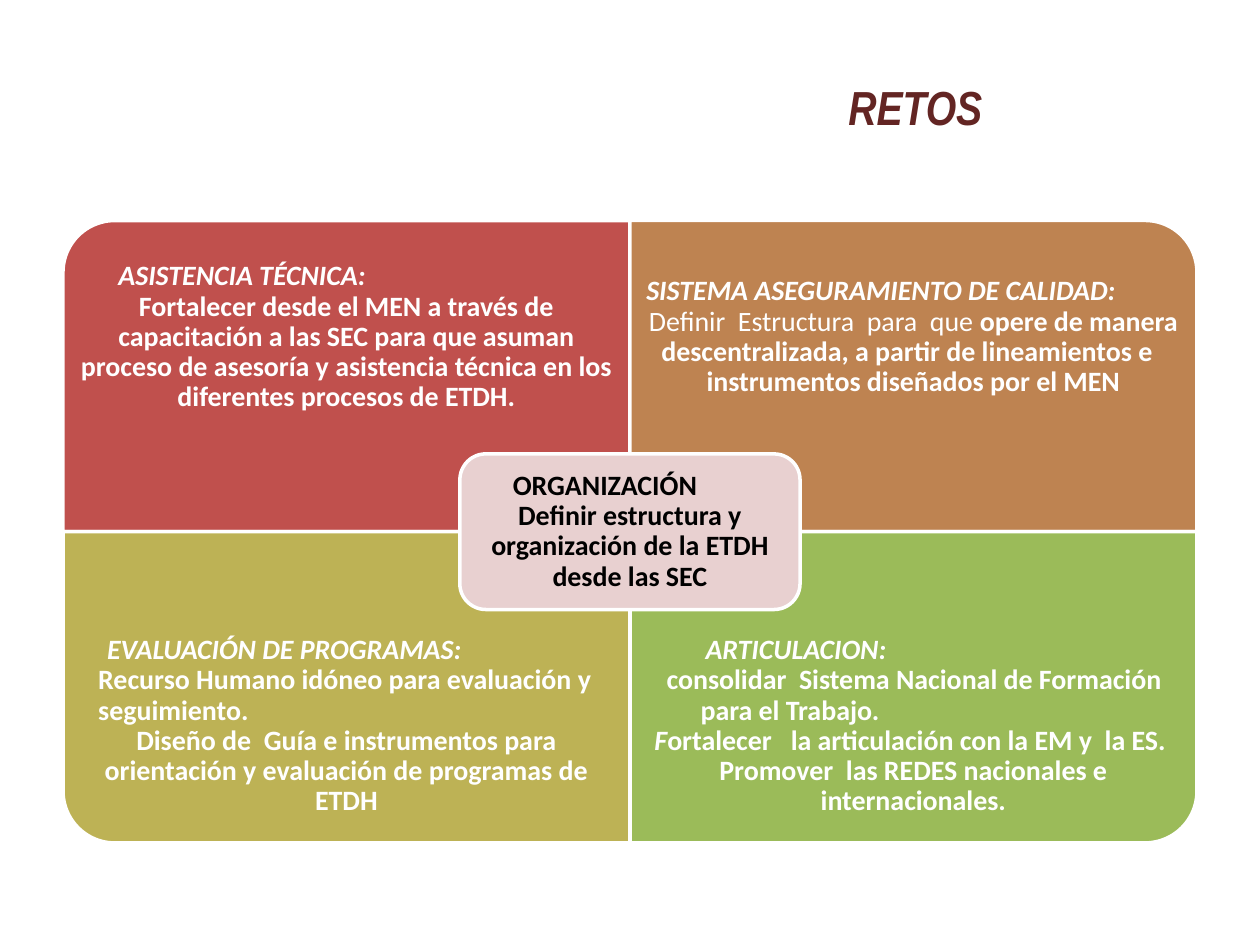
from pptx import Presentation
from pptx.dml.color import RGBColor
from pptx.enum.shapes import MSO_SHAPE as Shape
from pptx.enum.text import MSO_ANCHOR as Anchor, PP_ALIGN as Align
from pptx.util import Inches, Pt

WHITE = RGBColor(0xFF, 0xFF, 0xFF)
BLACK = RGBColor(0, 0, 0)
MAROON = RGBColor(0x63, 0x25, 0x23)
RED = RGBColor(0xC0, 0x50, 0x4D)
BROWN = RGBColor(0xBE, 0x83, 0x51)
OLIVE = RGBColor(0xBD, 0xB2, 0x55)
GREEN = RGBColor(0x9B, 0xBB, 0x59)
PINK = RGBColor(0xE8, 0xD0, 0xD0)

GOALS = [
    (RED, 270, [
        (0.32, 0, [("ASISTENCIA TÉCNICA:", "bi")]),
        (None, 0, [("Fortalecer desde el MEN a través de capacitación a las SEC para que asuman "
                    "proceso de asesoría y asistencia técnica en los diferentes procesos de ETDH.", "b")]),
    ]),
    (BROWN, 0, [
        (0.01, 0, [("SISTEMA ASEGURAMIENTO DE CALIDAD:", "bi")]),
        (None, 0, [("Definir  Estructura  para  que ", ""),
                   ("opere de manera descentralizada, a partir de lineamientos e   instrumentos "
                    "diseñados por el MEN", "b")]),
    ]),
    (OLIVE, 180, [
        (0.23, 0, [("EVALUACIÓN DE PROGRAMAS:", "bi")]),
        (0.16, 0, [("Recurso Humano idóneo para evaluación y seguimiento.", "b")]),
        (None, 0, [("Diseño de  Guía e instrumentos para orientación y evaluación de programas de ETDH", "b")]),
    ]),
    (GREEN, 90, [
        (0.48, 0, [("ARTICULACION:", "bi")]),
        (0.44, -0.27, [("consolidar  Sistema Nacional de Formación para el Trabajo", "b"), (".", "bi")]),
        (None, 0, [("F", "bi"),
                   ("ortalecer   la articulación con la EM y  la ES.  Promover  las REDES nacionales "
                    "e internacionales.", "b")]),
    ]),
]
CORE = [
    (0.29, 0, [("ORGANIZACIÓN", "b")]),
    (None, 0, [("Definir estructura y organización de la ETDH desde las SEC", "b")]),
]


def write(shape, paras, color, inset, size=16, face="Calibri", lead=0.9):
    frame = shape.text_frame
    frame.word_wrap = True
    frame.vertical_anchor = Anchor.MIDDLE
    frame.margin_left = frame.margin_right = Inches(inset)
    frame.margin_top = frame.margin_bottom = Inches(inset)
    for i, (left, first, runs) in enumerate(paras):
        para = frame.add_paragraph() if i else frame.paragraphs[0]
        para.line_spacing = lead
        para.alignment = Align.CENTER if left is None else Align.LEFT
        if left is not None:
            props = para._p.get_or_add_pPr()
            props.set("marL", str(Inches(left)))
            props.set("indent", str(Inches(first)))
        for text, style in runs:
            run = para.add_run()
            run.text = text
            font = run.font
            font.name, font.size = face, Pt(size)
            font.bold, font.italic = "b" in style, "i" in style
            font.color.rgb = color


def panel(slide, kind, x, y, w, h, color):
    shape = slide.shapes.add_shape(kind, Inches(x), Inches(y), Inches(w), Inches(h))
    shape.shadow.inherit = False
    shape.fill.solid()
    shape.fill.fore_color.rgb = color
    shape.line.color.rgb = WHITE
    shape.line.width = Pt(2)
    return shape


def title(slide, x, y, w, h):
    box = slide.shapes.add_textbox(Inches(x), Inches(y), Inches(w), Inches(h))
    write(box, [(None, 0, [("RETOS", "bi")])], MAROON, 0.1, 27.3, "Arial Narrow", 1)


def quarter(slide, x, y, w, h, goal, low):
    color, turn, paras = goal
    wide, tall = (h, w) if turn % 180 else (w, h)
    shape = panel(slide, Shape.ROUND_1_RECTANGLE,
                  x + (w - wide) / 2, y + (h - tall) / 2, wide, tall, color)
    shape.rotation = turn
    part = h * 0.75
    top = y + h - part if low else y
    box = slide.shapes.add_textbox(Inches(x), Inches(top), Inches(w), Inches(part))
    write(box, paras, WHITE, 0.12)


def matrix(slide, x, y, w, h):
    half, tall = w / 2, h / 2
    for i, goal in enumerate(GOALS):
        row, col = divmod(i, 2)
        quarter(slide, x + col * half, y + row * tall, half, tall, goal, row == 1)
    wide, high = half * 0.6, tall / 2
    core = panel(slide, Shape.ROUNDED_RECTANGLE,
                 x + (w - wide) / 2, y + (h - high) / 2, wide, high, PINK)
    write(core, CORE, BLACK, 0.07)


def main():
    deck = Presentation()
    deck.slide_width, deck.slide_height = Inches(10), Inches(7.5)
    slide = deck.slides.add_slide(deck.slide_layouts[6])
    title(slide, 4.53, 0.56, 5.47, 0.57)
    matrix(slide, 0.5, 1.75, 9, 4.94)
    deck.save("out.pptx")


if __name__ == "__main__":
    main()
